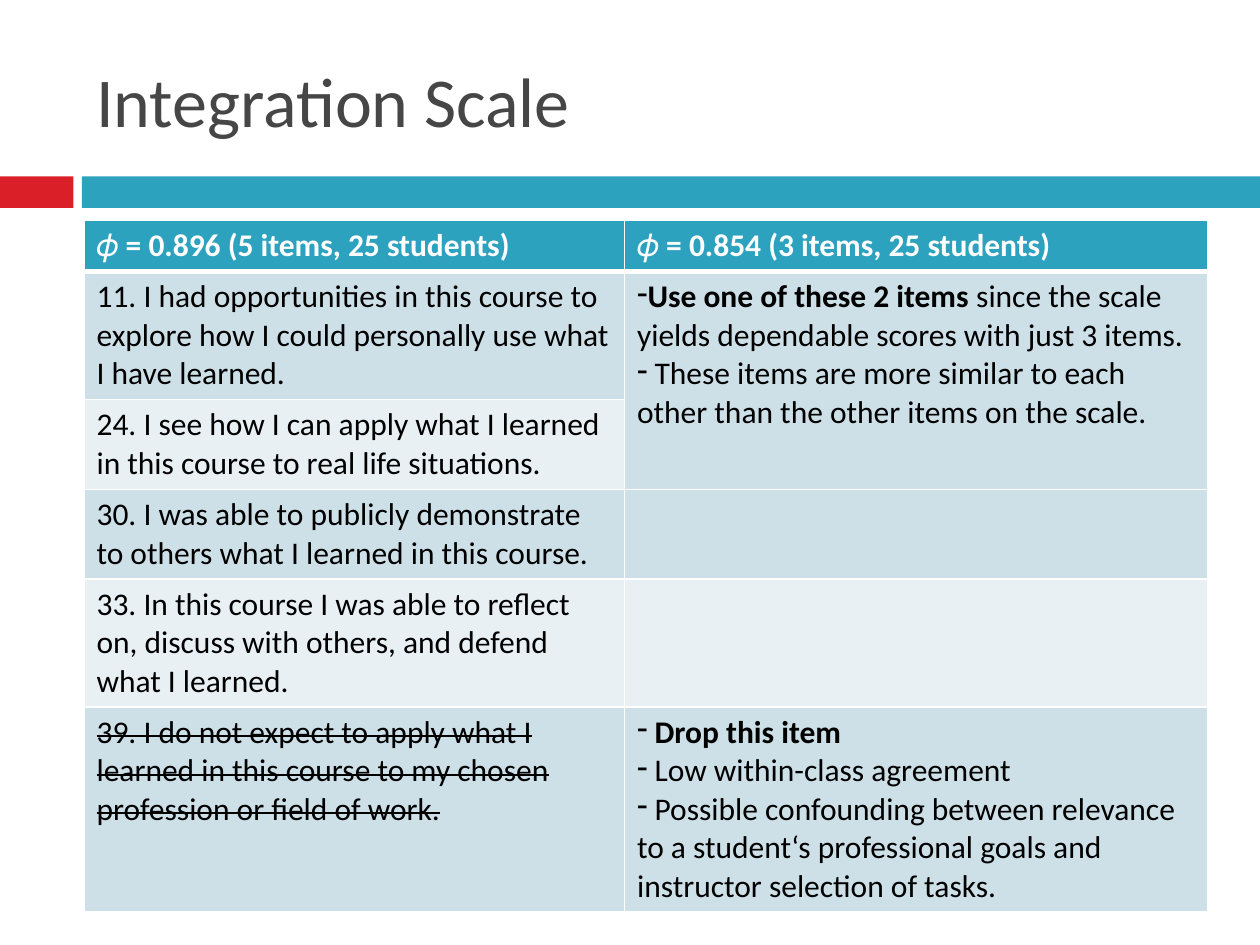
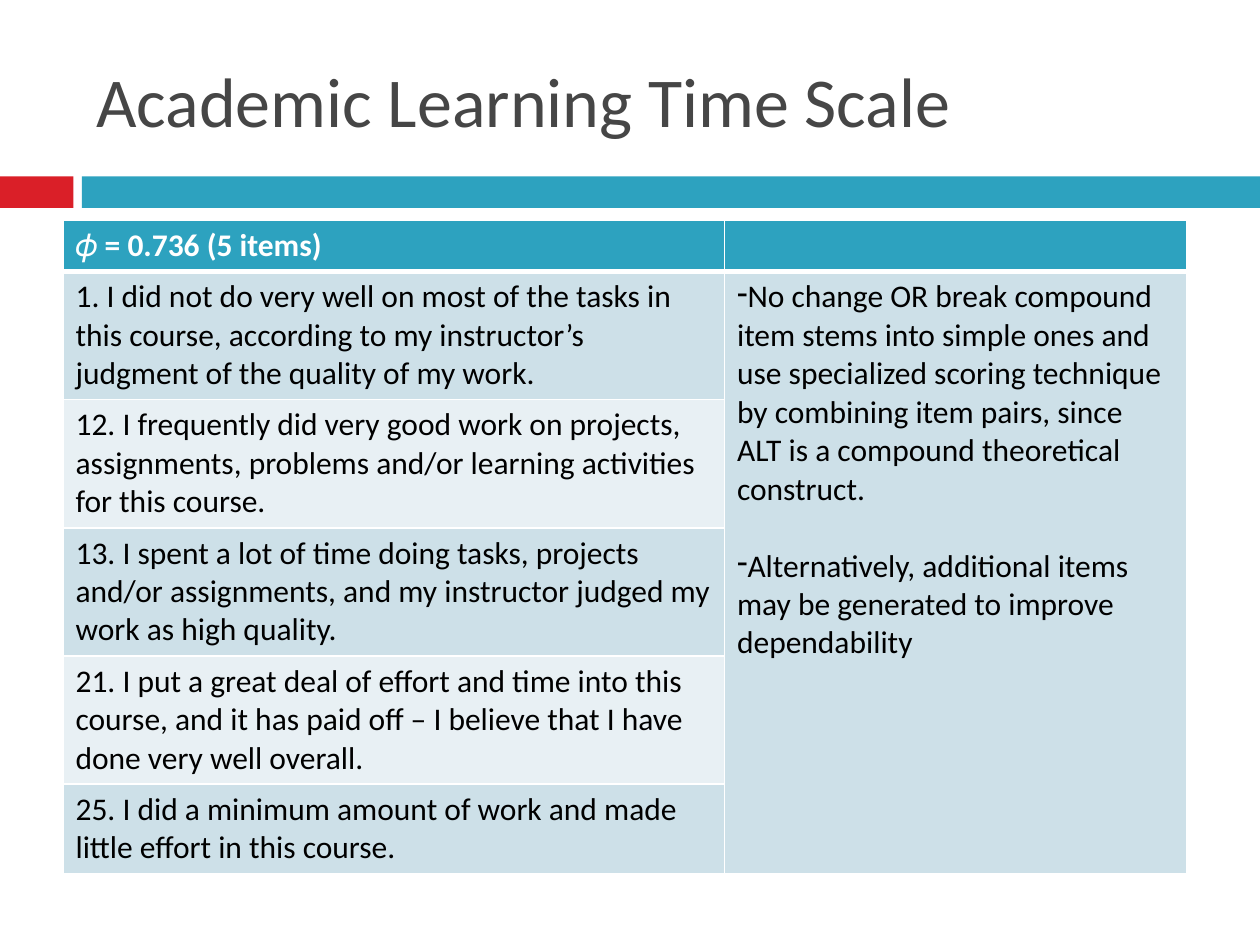
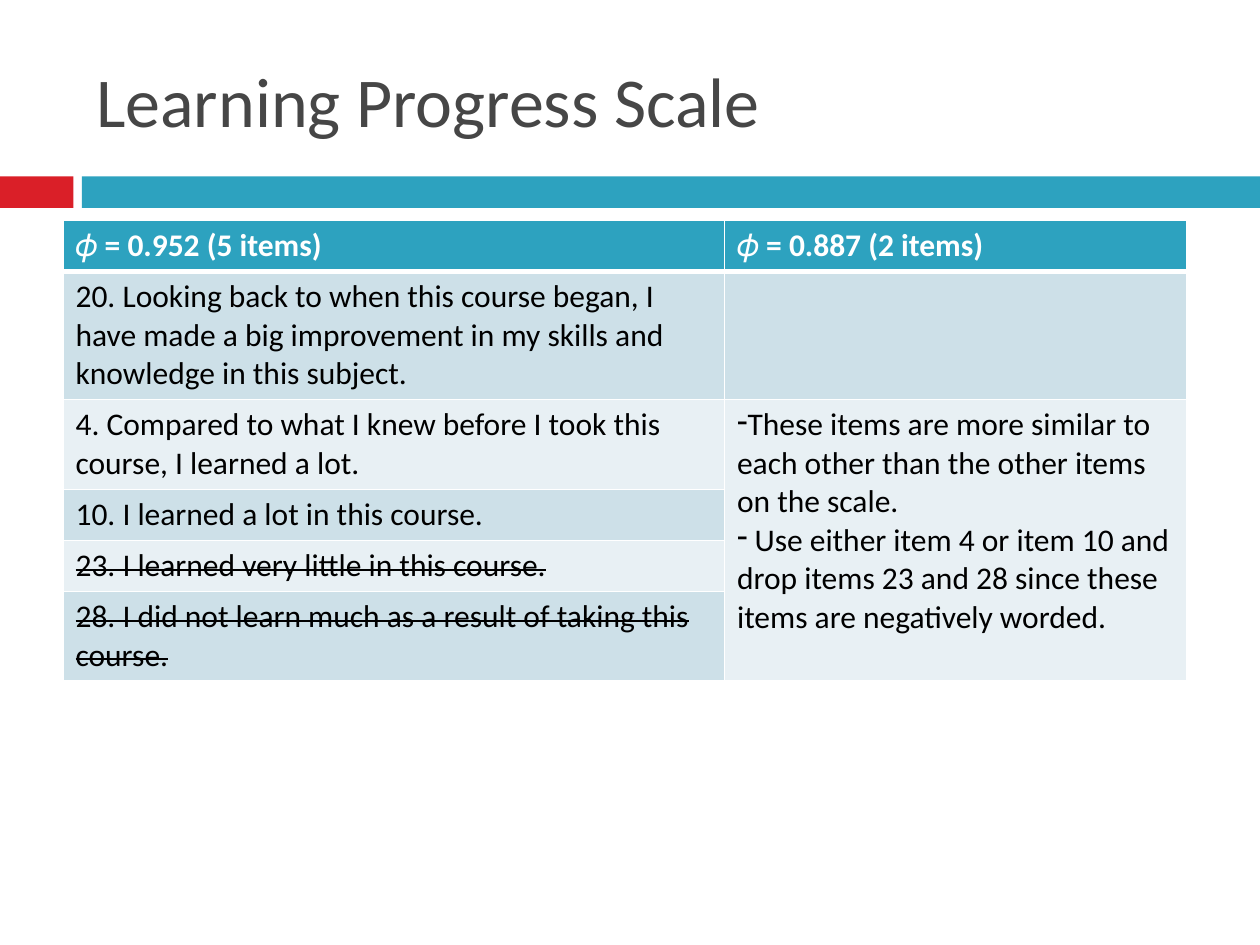
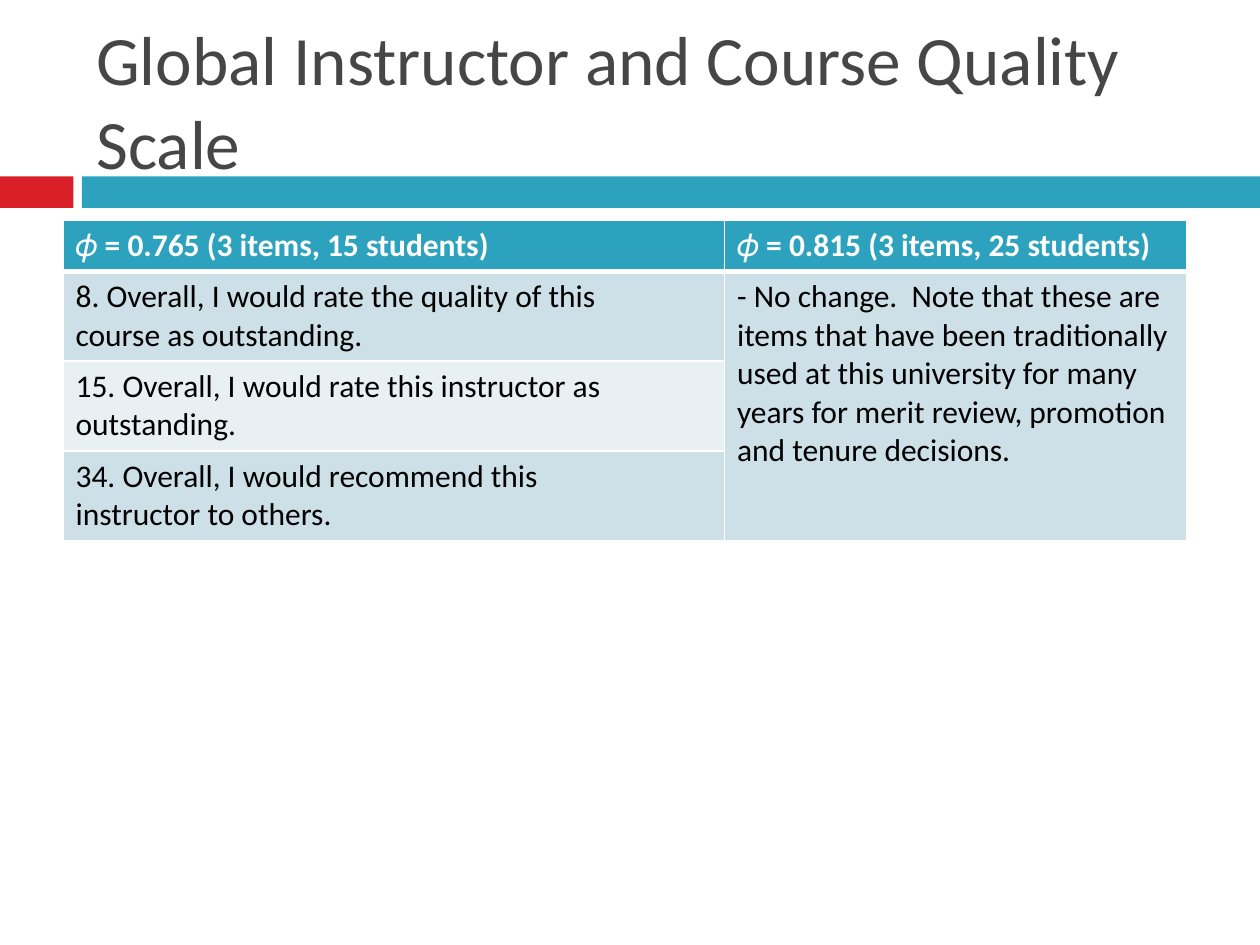
from dataclasses import dataclass

from pptx import Presentation
from pptx import util as u
from pptx.dml.color import RGBColor
from pptx.enum import shapes, text
from pptx.oxml import parse_xml
from pptx.oxml.ns import nsdecls

Pt = u.Pt


@dataclass(frozen=True)
class Theme:
    font: str = "Calibri"
    title_size: float = 40
    body_size: float = 18
    line_height: float = 22
    cell_padding: float = 7.2
    title: str = "464646"
    accent: str = "DA1F28"
    main: str = "2DA2BF"
    body: str = "000000"
    white: str = "FFFFFF"
    stripes: tuple = ("CDE0E8", "E8F0F4")
    thin: float = 1
    thick: float = 3


THEME = Theme()
TABLE_TOP = 126
WIDE_LEFT = dict(left=36, widths=(378, 264.24))


@dataclass(frozen=True)
class Para:
    """One paragraph; each phrase is a (text, bold) pair."""
    phrases: tuple
    bullet: bool = False
    space_before: float = 0


@dataclass(frozen=True)
class Row:
    """One scale item, its note, and the rows the note covers."""
    item: tuple
    lines: int
    note: tuple = ()
    note_rows: int = 1
    struck: bool = False


def plain(*lines):
    return tuple(Para(((line, False),)) for line in lines)


def dash(words, bold=False, space_before=0):
    return Para(((words, bold),), bullet=True, space_before=space_before)


# Text
def write(frame, paras, *, size=THEME.body_size, color=THEME.body, bold=False, struck=False):
    frame.word_wrap = True
    for index, content in enumerate(paras):
        para = frame.paragraphs[0] if index == 0 else frame.add_paragraph()
        para.alignment = text.PP_ALIGN.LEFT
        if content.space_before:
            para.space_before = Pt(content.space_before)
        if content.bullet:
            settings = para._p.get_or_add_pPr()
            settings.set("marL", "0")
            settings.set("indent", "0")
            settings.append(parse_xml(f'<a:buChar {nsdecls("a")} char="-"/>'))
        for words, strong in content.phrases:
            span = para.add_run()
            span.text = words
            span.font.name = THEME.font
            span.font.size = Pt(size)
            span.font.bold = bold or strong
            span.font.color.rgb = RGBColor.from_string(color)
            if struck:
                span._r.get_or_add_rPr().set("strike", "sngStrike")


# Title and bands
def add_band(page, left, width, color):
    band = page.shapes.add_shape(
        shapes.MSO_SHAPE.RECTANGLE, Pt(left), Pt(100.8), Pt(width), Pt(18))
    band.shadow.inherit = False
    band.fill.solid()
    band.fill.fore_color.rgb = RGBColor.from_string(color)
    band.line.fill.background()


def add_title(page, words, size):
    box = page.shapes.add_textbox(Pt(48), Pt(18), Pt(642), Pt(78))
    box.text_frame.vertical_anchor = text.MSO_ANCHOR.MIDDLE
    write(box.text_frame, plain(words), size=size, color=THEME.title)


def add_page(deck, title, size=THEME.title_size):
    page = deck.slides.add_slide(deck.slide_layouts[6])
    add_band(page, 0, 42, THEME.accent)
    add_band(page, 46.8, 673.2, THEME.main)
    add_title(page, title, size)
    return page


# Table
def style_cell(cell, fill, top, bottom):
    cell.fill.solid()
    cell.fill.fore_color.rgb = RGBColor.from_string(fill)
    edges = (("lnL", THEME.thin), ("lnR", THEME.thin), ("lnT", top), ("lnB", bottom))
    properties = cell._tc.get_or_add_tcPr()
    for index, (edge, width) in enumerate(edges):
        properties.insert(index, parse_xml(
            f'<a:{edge} {nsdecls("a")} w="{Pt(width)}"><a:solidFill>'
            f'<a:srgbClr val="{THEME.white}"/></a:solidFill></a:{edge}>'))


def row_height(lines):
    return Pt(THEME.cell_padding + lines * THEME.line_height)


def add_scale_table(page, headings, rows, *, left, widths):
    heights = [row_height(1)] + [row_height(row.lines) for row in rows]
    table = page.shapes.add_table(
        len(heights), len(widths), Pt(left), Pt(TABLE_TOP),
        Pt(sum(widths)), sum(heights)).table
    table.horz_banding = False
    for column, width in zip(table.columns, widths):
        column.width = Pt(width)
    for line, height in zip(table.rows, heights):
        line.height = height

    # Header row
    for column, heading in enumerate(headings):
        cell = table.cell(0, column)
        style_cell(cell, THEME.main, THEME.thin, THEME.thick)
        if heading:
            write(cell.text_frame, plain(heading), color=THEME.white, bold=True)

    # Items on the left, notes on the right
    for number, row in enumerate(rows, start=1):
        item, note = table.cell(number, 0), table.cell(number, 1)
        fill = THEME.stripes[(number - 1) % 2]
        for cell in (item, note):
            style_cell(cell, fill, THEME.thick if number == 1 else THEME.thin, THEME.thin)
        write(item.text_frame, plain(*row.item), struck=row.struck)
        write(note.text_frame, row.note)
        if row.note_rows > 1:
            note.merge(table.cell(number + row.note_rows - 1, 1))


# Pages
def add_integration(deck):
    page = add_page(deck, "Integration Scale")
    choice = Para((("Use one of these 2 items ", True),
                   ("since the scale yields dependable scores with just 3 items.", False)),
                  bullet=True)
    add_scale_table(page, (
        "𝜙 = 0.896 (5 items, 25 students)", "𝜙 = 0.854 (3 items, 25 students)"), [
        Row(("11. I had opportunities in this course to explore how I could personally "
             "use what I have learned.",), 3,
            (choice, dash(" These items are more similar to each other than the other "
                          "items on the scale.")), note_rows=2),
        Row(("24. I see how I can apply what I learned in this course to real life "
             "situations.",), 2),
        Row(("30. I was able to publicly demonstrate to others what I learned in this "
             "course.",), 2),
        Row(("33. In this course I was able to reflect on, discuss with others, and "
             "defend what I learned.",), 3),
        Row(("39. I do not expect to apply what I learned in this course to my chosen "
             "profession or field of work.",), 5,
            (dash(" Drop this item", bold=True), dash(" Low within-class agreement"),
             dash(" Possible confounding between relevance to a student‘s professional "
                  "goals and instructor selection of tasks.")), struck=True),
    ], left=48, widths=(308.88, 333.36))


def add_learning_time(deck):
    page = add_page(deck, "Academic Learning Time Scale")
    add_scale_table(page, ("𝜙 = 0.736 (5 items)", ""), [
        Row(("1. I did not do very well on most of the tasks in this course, according to "
             "my instructor’s judgment of the quality of my work.",), 3,
            (dash("No change OR break compound item stems into simple ones and use "
                  "specialized scoring technique by combining item pairs, since ALT is a "
                  "compound theoretical construct."),
             dash("Alternatively, additional items may be generated to improve "
                  "dependability", space_before=THEME.line_height)), note_rows=5),
        Row(("12. I frequently did very good work on projects, assignments, problems "
             "and/or learning activities for this course.",), 3),
        Row(("13. I spent a lot of time doing tasks, projects and/or assignments, and my "
             "instructor judged my work as high quality.",), 3),
        Row(("21. I put a great deal of effort and time into this course, and it has paid "
             "off – I believe that I have", "done very well overall."), 3),
        Row(("25. I did a minimum amount of work and made little effort in this "
             "course.",), 2),
    ], **WIDE_LEFT)


def add_learning_progress(deck):
    page = add_page(deck, "Learning Progress Scale")
    add_scale_table(page, ("𝜙 = 0.952 (5 items)", "𝜙 = 0.887 (2 items)"), [
        Row(("20. Looking back to when this course began, I have made a big improvement "
             "in my skills and knowledge in this subject.",), 3),
        Row(("4. Compared to what I knew before I took this course, I learned a lot.",), 2,
            (dash("These items are more similar to each other than the other items on "
                  "the scale."),
             dash(" Use either item 4 or item 10 and drop items 23 and 28 since these "
                  "items are negatively worded.")), note_rows=4),
        Row(("10. I learned a lot in this course.",), 1),
        Row(("23. I learned very little in this course.",), 1, struck=True),
        Row(("28. I did not learn much as a result of taking this course.",), 2,
            struck=True),
    ], **WIDE_LEFT)


def add_global_quality(deck):
    page = add_page(deck, "Global Instructor and Course Quality Scale", size=39.6)
    add_scale_table(page, (
        "𝜙 = 0.765 (3 items, 15 students)", "𝜙 = 0.815 (3 items, 25 students)"), [
        Row(("8. Overall, I would rate the quality of this", "course as outstanding."), 2,
            plain("- No change.  Note that these are items that have been traditionally "
                  "used at this university for many years for merit review, promotion "
                  "and tenure decisions."), note_rows=3),
        Row(("15. Overall, I would rate this instructor as", "outstanding."), 2),
        Row(("34. Overall, I would recommend this", "instructor to others."), 2),
    ], **WIDE_LEFT)


def main():
    deck = Presentation()
    deck.slide_width, deck.slide_height = Pt(720), Pt(540)
    add_integration(deck)
    add_learning_time(deck)
    add_learning_progress(deck)
    add_global_quality(deck)
    deck.save("out.pptx")


if __name__ == "__main__":
    main()
